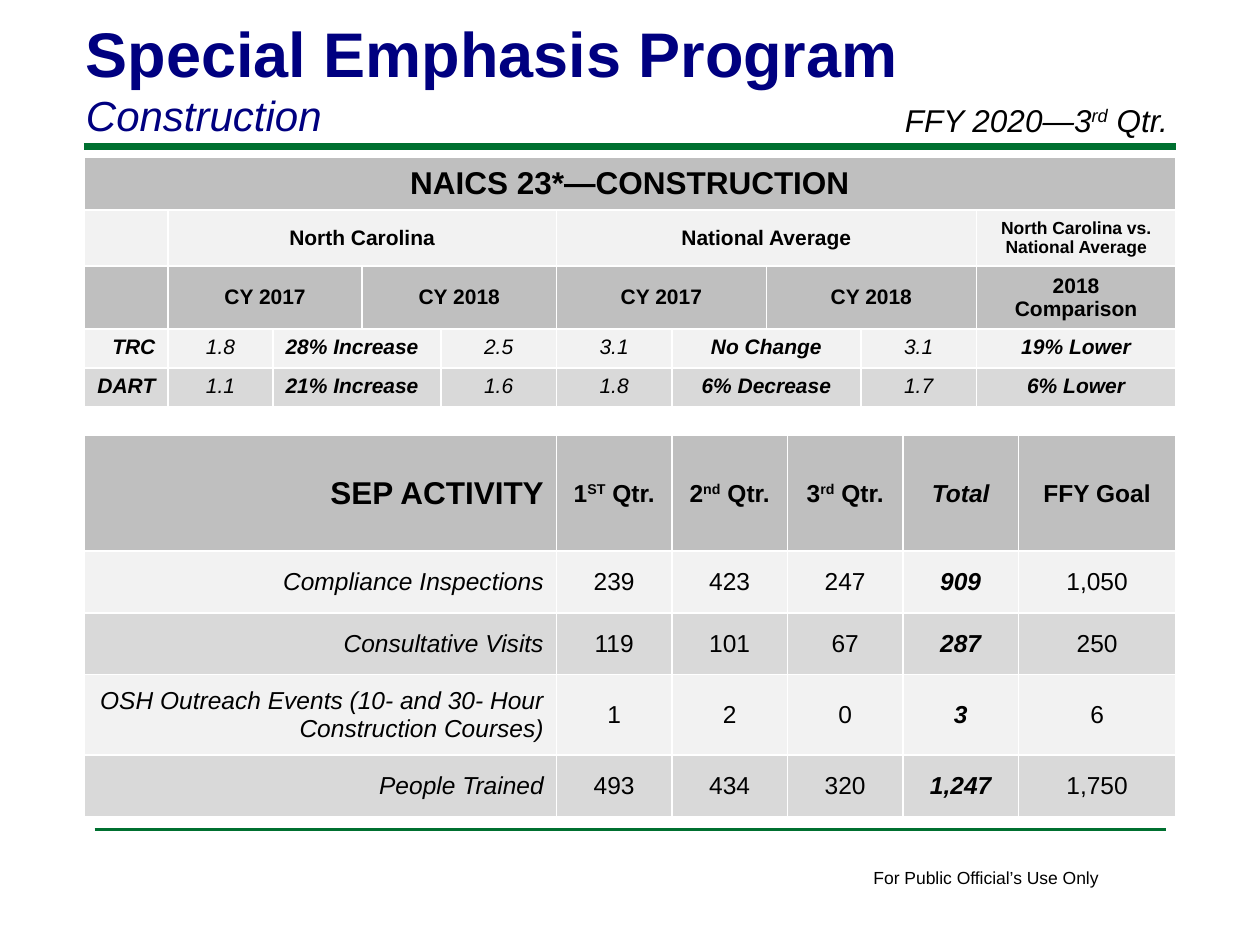
from lxml import etree
from pptx import Presentation
from pptx.dml.color import RGBColor
from pptx.enum.shapes import MSO_CONNECTOR
from pptx.enum.text import MSO_ANCHOR as ANCHOR, PP_ALIGN as ALIGN
from pptx.oxml import parse_xml
from pptx.oxml.ns import nsdecls, qn
from pptx.util import Pt

GREEN = RGBColor(0x00, 0x70, 0x30)
NAVY = RGBColor(0x00, 0x00, 0x80)
BLACK = RGBColor(0x00, 0x00, 0x00)
HEAD = RGBColor(0xBF, 0xBF, 0xBF)
LIGHT = RGBColor(0xF2, 0xF2, 0xF2)
MID = RGBColor(0xD9, 0xD9, 0xD9)


def add_runs(p, text, size, style="", color=BLACK):
    """Text between ^ marks is superscript; style holds b and/or i."""
    for n, part in enumerate(text.split("^")):
        r = p.add_run()
        r.text = part
        f = r.font
        f.name, f.size, f.color.rgb = "Arial", Pt(size), color
        f.bold, f.italic = "b" in style, "i" in style
        if n % 2:
            r._r.get_or_add_rPr().set("baseline", "30000")


def add_grid(s, x, y, widths, heights, fills, rows):
    """Each row lists cells as (text, size, style, align, anchor, span)."""
    t = s.shapes.add_table(len(heights), len(widths), Pt(x), Pt(y),
                           Pt(sum(widths)), Pt(sum(heights))).table
    t.first_row = t.horz_banding = False
    for col, w in zip(t.columns, widths):
        col.width = Pt(w)
    for i, (h, fill, row) in enumerate(zip(heights, fills, rows)):
        t.rows[i].height = Pt(h)
        for cell in t.rows[i].cells:
            for side in "LRTB":
                cell._tc.get_or_add_tcPr().append(parse_xml(
                    f'<a:ln{side} {nsdecls("a")} w="12700"><a:solidFill>'
                    f'<a:srgbClr val="FFFFFF"/></a:solidFill></a:ln{side}>'))
            cell.fill.solid()
            cell.fill.fore_color.rgb = fill
        j = 0
        for text, size, style, align, anchor, span in row:
            cell = t.cell(i, j)
            if span > 1:
                cell.merge(t.cell(i, j + span - 1))
            cell.vertical_anchor = anchor
            p = cell.text_frame.paragraphs[0]
            p.alignment = align
            if text:
                add_runs(p, text, size, style)
            j += span


prs = Presentation()
prs.slide_width, prs.slide_height = Pt(720), Pt(540)
s = prs.slides.add_slide(prs.slide_layouts[6])

# Rules under the title and above the footer
for x1, x2, y, width in [(48, 672, 84, 4), (54, 666, 474, 2)]:
    rule = s.shapes.add_connector(MSO_CONNECTOR.STRAIGHT, Pt(x1), Pt(y), Pt(x2), Pt(y))
    rule.line.color.rgb = GREEN
    rule.line.width = Pt(width)
    etree.SubElement(rule._element.spPr, qn("a:effectLst"))

# Title, period and footer
boxes = [
    (42, 4.5, 594, 80, True, [("Special Emphasis Program", 36, "b", NAVY),
                              ("Construction", 24, "i", NAVY)]),
    (510, 54, 180, 29, True, [("FFY 2020—3^rd^ Qtr.", 18, "i", BLACK)]),
    (492, 492, 145, 19.4, False, [("For Public Official’s Use Only", 10, "", BLACK)]),
]
for x, y, w, h, wrap, lines in boxes:
    tf = s.shapes.add_textbox(Pt(x), Pt(y), Pt(w), Pt(h)).text_frame
    tf.word_wrap = wrap
    for n, line in enumerate(lines):
        p = tf.add_paragraph() if n else tf.paragraphs[0]
        add_runs(p, *line)

# SEP activity table
QTR = (ALIGN.CENTER, ANCHOR.MIDDLE, 1)
NAME = (ALIGN.RIGHT, ANCHOR.MIDDLE, 1)
activity = [
    ("Compliance Inspections", "239", "423", "247", "909", "1,050"),
    ("Consultative Visits", "119", "101", "67", "287", "250"),
    ("OSH Outreach Events (10- and 30- Hour Construction Courses)",
     "1", "2", "0", "3", "6"),
    ("People Trained", "493", "434", "320", "1,247", "1,750"),
]
rows = [[("SEP ACTIVITY", 18, "b", *NAME)]
        + [(text, 14, style, *QTR) for text, style in [
            ("1^ST^ Qtr.", "b"), ("2^nd^ Qtr.", "b"), ("3^rd^ Qtr.", "b"),
            ("Total", "bi"), ("FFY Goal", "b")]]]
for name, *values in activity:
    rows.append([(name, 14, "i", *NAME)]
                + [(v, 14, style, *QTR)
                   for v, style in zip(values, ["", "", "", "bi", ""])])
add_grid(s, 48, 249, [270, 66, 66, 66, 66, 90], [66, 35.3, 35.3, 46, 35.3],
         [HEAD, LIGHT, MID, LIGHT, MID], rows)

# NAICS rate table: headings as (text, size, span), then the rates
headings = [
    [("NAICS 23*—CONSTRUCTION", 18, 10)],
    [("", 12, 1), ("North Carolina", 12, 4), ("National Average", 12, 4),
     ("North Carolina vs. National Average", 10, 1)],
    [("", 12, 1)] + [("CY 2017", 12, 2), ("CY 2018", 12, 2)] * 2
    + [("2018 Comparison", 12, 1)],
]
rates = [
    ("TRC", "1.8", "28% Increase", "2.5", "3.1", "No Change", "3.1", "19% Lower"),
    ("DART", "1.1", "21% Increase", "1.6", "1.8", "6% Decrease", "1.7", "6% Lower"),
]
rate_styles = ["bi", "i", "bi", "i", "i", "bi", "i", "bi"]
rate_aligns = [ALIGN.RIGHT, ALIGN.CENTER, ALIGN.LEFT] + [ALIGN.CENTER] * 5
rate_spans = [1, 1, 2, 1, 1, 2, 1, 1]
rows = [[(text, size, "b", ALIGN.CENTER, ANCHOR.MIDDLE, span)
         for text, size, span in row] for row in headings]
rows += [[(text, 12, style, align, ANCHOR.TOP, span)
          for text, style, align, span
          in zip(row, rate_styles, rate_aligns, rate_spans)] for row in rates]
add_grid(s, 48, 90, [48, 60, 51, 45, 66, 66, 54, 54, 66, 114],
         [30, 32, 30, 22.3, 22.3], [HEAD, LIGHT, HEAD, LIGHT, MID], rows)

prs.save("out.pptx")
